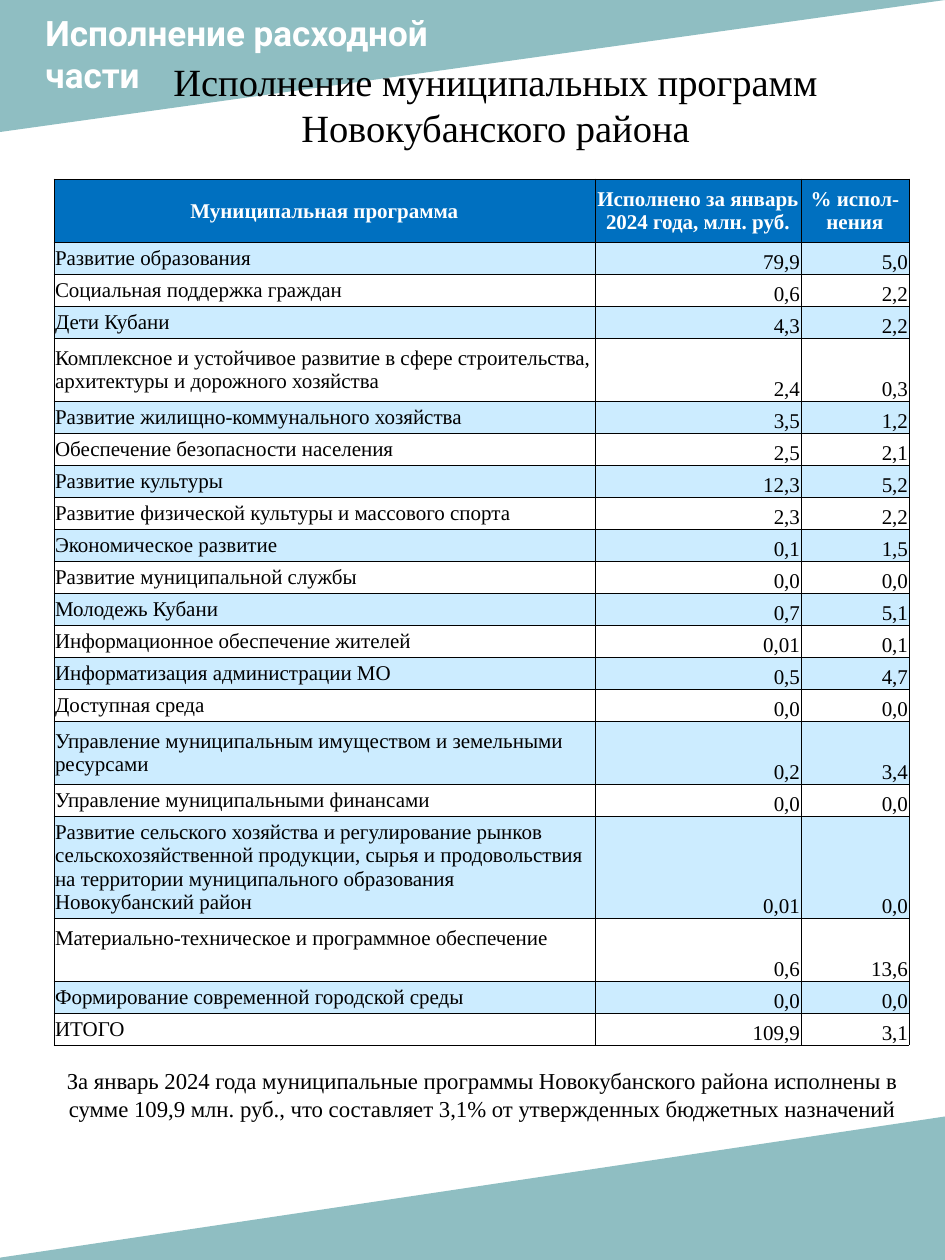
"""Build the slide on the execution of municipal programmes."""
from lxml.etree import SubElement
from pptx import Presentation
from pptx.dml.color import RGBColor
from pptx.enum.shapes import MSO_SHAPE as Shape
from pptx.enum.text import MSO_ANCHOR as Anchor, MSO_AUTO_SIZE as AutoSize, PP_ALIGN as Align
from pptx.oxml.ns import qn
from pptx.util import Emu, Pt

SCALE = 914400 / 126
COLORS = {
    "teal": "519AA0", "header": "0070C0", "band": "CCECFF",
    "white": "FFFFFF", "black": "000000",
}
SERIF = "Times New Roman"
HEADING = {"name": "Roboto", "size": Pt(20), "bold": True}
TITLE = {"name": SERIF, "size": Pt(22), "bold": False}
SUMMARY = {"name": SERIF, "size": Pt(13), "bold": False}
TABLE_HEAD = {"name": SERIF, "size": Pt(12), "bold": True}
TABLE_BODY = {"name": SERIF, "size": Pt(12), "bold": False}

COLUMN_WIDTHS = [541, 206, 108]
LINE_HEIGHT = 24
ROW_HEIGHT, TALL_HEIGHT = 32, 63
HEADER = ["Муниципальная программа", "Исполнено за январь 2024 года, млн. руб.", "% испол-нения"]
PROGRAMS = [
    ("Развитие образования", "79,9", "5,0"),
    ("Социальная поддержка граждан", "0,6", "2,2"),
    ("Дети Кубани", "4,3", "2,2"),
    ("Комплексное и устойчивое развитие в сфере строительства, архитектуры и дорожного хозяйства",
     "2,4", "0,3"),
    ("Развитие жилищно-коммунального хозяйства", "3,5", "1,2"),
    ("Обеспечение безопасности населения", "2,5", "2,1"),
    ("Развитие культуры", "12,3", "5,2"),
    ("Развитие физической культуры и массового спорта", "2,3", "2,2"),
    ("Экономическое развитие", "0,1", "1,5"),
    ("Развитие муниципальной службы", "0,0", "0,0"),
    ("Молодежь Кубани", "0,7", "5,1"),
    ("Информационное обеспечение жителей", "0,01", "0,1"),
    ("Информатизация администрации МО", "0,5", "4,7"),
    ("Доступная среда", "0,0", "0,0"),
    ("Управление муниципальным имуществом и земельными ресурсами", "0,2", "3,4"),
    ("Управление муниципальными финансами", "0,0", "0,0"),
    ("Развитие сельского хозяйства и регулирование рынков сельскохозяйственной продукции, "
     "сырья и продовольствия на территории муниципального образования Новокубанский район",
     "0,01", "0,0"),
    ("Материально-техническое и программное обеспечение", "0,6", "13,6"),
    ("Формирование современной городской среды", "0,0", "0,0"),
    ("ИТОГО", "109,9", "3,1"),
]
SPECIAL_HEIGHTS = {0: TALL_HEIGHT, 4: TALL_HEIGHT, 15: TALL_HEIGHT, 17: 102, 18: TALL_HEIGHT}
SPACED_ROW = 18


def px(length):
    """Turn pixels into EMU."""
    return Emu(round(length * SCALE))


def rgb(color):
    """Look up a named colour."""
    return RGBColor.from_string(COLORS[color])


def set_values(target, values):
    """Set attributes of an object from a dict."""
    for name, value in values.items():
        setattr(target, name, value)


def write(para, text, font, color, align):
    """Write one formatted span into a paragraph."""
    para.alignment = align
    span = para.add_run()
    span.text = text
    set_values(span.font, font)
    span.font.color.rgb = rgb(color)


def add_wedge(page, area, flip):
    """Add a translucent corner triangle."""
    wedge = page.shapes.add_shape(Shape.RIGHT_TRIANGLE, *map(px, area))
    wedge.shadow.inherit = False
    wedge.rotation = 180
    wedge.element.spPr.find(qn("a:xfrm")).set(flip, "1")
    wedge.fill.solid()
    wedge.fill.fore_color.rgb = rgb("teal")
    wedge.line.fill.background()
    tint = wedge.element.spPr.find(qn("a:solidFill")).find(qn("a:srgbClr"))
    SubElement(tint, qn("a:alpha"), val="64000")


def add_text(page, area, lines, font, color, align):
    """Add a wrapped text box with one paragraph per line."""
    box = page.shapes.add_textbox(*map(px, area))
    frame = box.text_frame
    set_values(frame, {"word_wrap": True, "auto_size": AutoSize.SHAPE_TO_FIT_TEXT})
    for index, line in enumerate(lines):
        para = frame.add_paragraph() if index else frame.paragraphs[0]
        write(para, line, font, color, align)


def add_borders(cell):
    """Draw thin black borders around a cell."""
    properties = cell._tc.get_or_add_tcPr()
    for side in ("lnL", "lnR", "lnT", "lnB"):
        line = SubElement(properties, qn(f"a:{side}"), w=str(Pt(0.5)))
        fill = SubElement(line, qn("a:solidFill"))
        SubElement(fill, qn("a:srgbClr"), val=COLORS["black"])


def fill_cell(cell, text, row, column):
    """Format and fill one cell by its place in the table."""
    add_borders(cell)
    is_label = column == 0
    spaced = row == SPACED_ROW and is_label
    set_values(cell, {
        "margin_left": px(1), "margin_right": px(1), "margin_top": px(1),
        "margin_bottom": px(LINE_HEIGHT if spaced else 0),
        "vertical_anchor": Anchor.MIDDLE if row == 0 or is_label else Anchor.BOTTOM,
    })
    cell.fill.solid()
    para = cell.text_frame.paragraphs[0]
    if row == 0:
        cell.fill.fore_color.rgb = rgb("header")
        write(para, text, TABLE_HEAD, "white", Align.CENTER)
    else:
        cell.fill.fore_color.rgb = rgb("band" if row % 2 else "white")
        write(para, text, TABLE_BODY, "black", Align.LEFT if is_label else Align.RIGHT)


def add_program_table(page, left, top):
    """Add the table of programmes."""
    rows = [HEADER, *PROGRAMS]
    heights = [SPECIAL_HEIGHTS.get(row, ROW_HEIGHT) for row in range(len(rows))]
    area = (left, top, sum(COLUMN_WIDTHS), sum(heights))
    table = page.shapes.add_table(len(rows), len(HEADER), *map(px, area)).table
    for column, width in zip(table.columns, COLUMN_WIDTHS):
        column.width = px(width)
    for row, (texts, height) in enumerate(zip(rows, heights)):
        table.rows[row].height = px(height)
        for column, text in enumerate(texts):
            fill_cell(table.cell(row, column), text, row, column)


def main():
    """Build and save the deck."""
    deck = Presentation()
    set_values(deck, {"slide_width": px(945), "slide_height": px(1260)})
    page = deck.slides.add_slide(deck.slide_layouts[6])
    add_wedge(page, (0, 0, 945, 132), "flipH")
    add_wedge(page, (-16, 1116, 964, 144), "flipV")
    add_text(page, (33, 5, 614, 97), ["Исполнение расходной", "части"],
             HEADING, "white", Align.LEFT)
    add_text(page, (81, 52, 829, 105), ["Исполнение муниципальных программ Новокубанского района"],
             TITLE, "black", Align.CENTER)
    add_text(page, (54, 1061, 855, 96),
             ["За январь 2024 года муниципальные программы Новокубанского района исполнены в сумме "
              "109,9 млн. руб., что составляет 3,1% от утвержденных бюджетных назначений"],
             SUMMARY, "black", Align.CENTER)
    add_program_table(page, 54, 179)
    deck.save("out.pptx")


if __name__ == "__main__":
    main()
